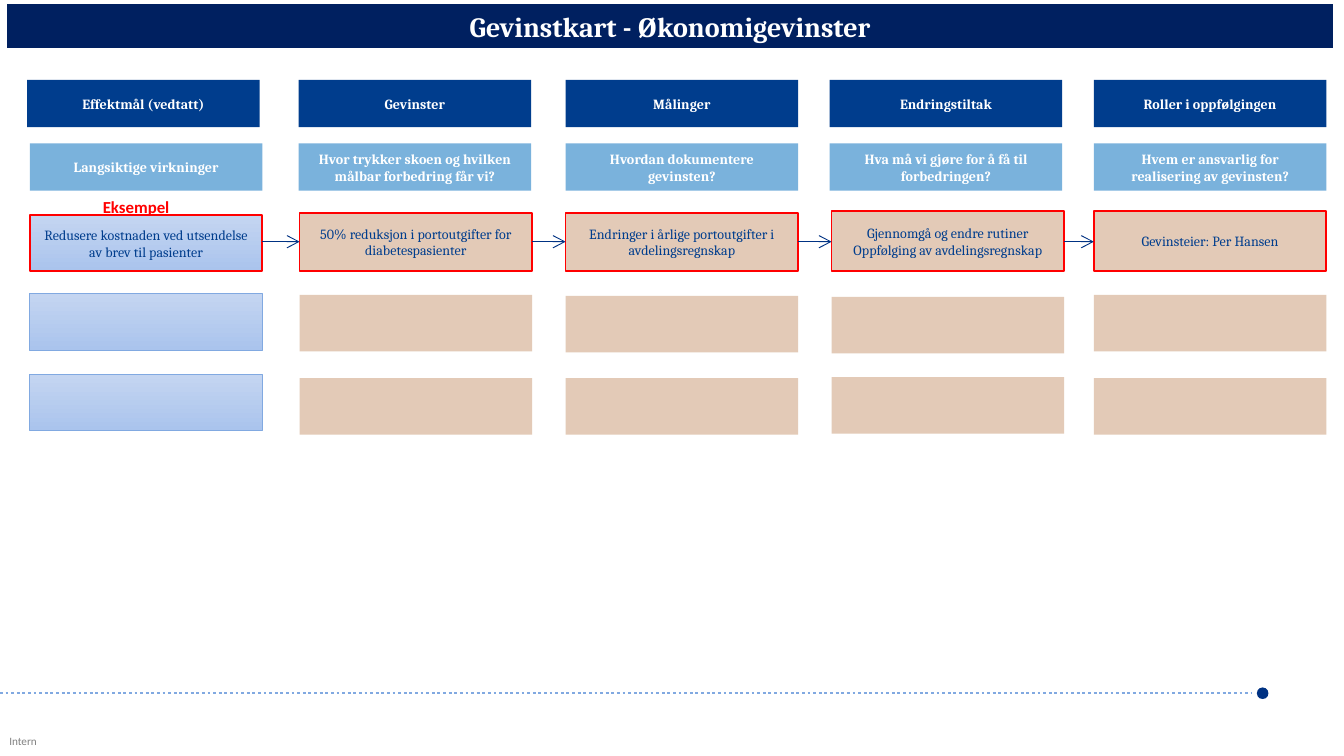
from lxml import etree
from pptx import Presentation
from pptx import util as u
from pptx.dml.color import RGBColor
from pptx.enum import dml, shapes, text
from pptx.oxml import ns

NAVY, BLUE, SKY, BEIGE = "002060", "003D8D", "7AB2DC", "D1A887"
RED, WHITE, PALE, ACCENT = "FF0000", "FFFFFF", "81A9E1", "003283"
HEADING_LEFTS = (14.5, 160, 303, 444.5, 586)
CARD_LEFTS = (16, 160.5, 303, 445.5, 586)
WIDTH = 124.6
HEADINGS = ("Effektmål (vedtatt)", "Gevinster", "Målinger", "Endringstiltak", "Roller i oppfølgingen")
QUESTIONS = (
    "Langsiktige virkninger",
    "Hvor trykker skoen og hvilken målbar forbedring får vi?",
    "Hvordan dokumentere gevinsten?",
    "Hva må vi gjøre for å få til forbedringen?",
    "Hvem er ansvarlig for realisering av gevinsten?",
)
EXAMPLES = (
    "Redusere kostnaden ved utsendelse av brev til pasienter",
    "50% reduksjon i portoutgifter for diabetespasienter",
    "Endringer i årlige portoutgifter i avdelingsregnskap",
    "Gjennomgå og endre rutiner\nOppfølging av avdelingsregnskap",
    "Gevinsteier: Per Hansen",
)
EXAMPLE_TOPS = (115.2, 114, 114, 113, 113)
EMPTY_ROWS = ((157.3, 158, 158.5, 159, 158), (200.5, 202.5, 202.5, 202, 202.5))


def rgb(value):
    """Turn a hex string into a colour."""
    return RGBColor.from_string(value)


def set_alpha(fill_owner, percent):
    """Make the colour inside a solid fill partly transparent."""
    color = next(fill_owner.iter(ns.qn("a:srgbClr")))
    etree.SubElement(color, ns.qn("a:alpha")).set("val", str(percent * 1000))


def write(box, wording, size, color, bold=False, font="Cambria", align=text.PP_ALIGN.CENTER):
    """Fill a shape with evenly formatted paragraphs."""
    frame = box.text_frame
    frame.text = wording
    frame.vertical_anchor = text.MSO_ANCHOR.MIDDLE
    for paragraph in frame.paragraphs:
        paragraph.alignment = align
        paragraph.font.name = font
        paragraph.font.size = u.Pt(size)
        paragraph.font.bold = bold
        paragraph.font.color.rgb = rgb(color)


def outline(box, color, width):
    """Draw the border of a shape."""
    box.line.color.rgb = rgb(color)
    box.line.width = u.Pt(width)


def add_block(slide, left, top, width, height, fill, kind=shapes.MSO_SHAPE.RECTANGLE):
    """Add a flat, borderless shape."""
    block = slide.shapes.add_shape(kind, u.Pt(left), u.Pt(top), u.Pt(width), u.Pt(height))
    block.shadow.inherit = False
    block.fill.solid()
    block.fill.fore_color.rgb = rgb(fill)
    block.line.fill.background()
    return block


def add_card(slide, column, top, height):
    """Add a goal card in the first column or a beige card in the others."""
    card = add_block(slide, CARD_LEFTS[column], top, WIDTH, height, BEIGE)
    if column:
        set_alpha(card.fill._xPr, 60)
        return card
    card.fill.gradient()
    card.fill.gradient_angle = 270
    for stop, color in zip(card.fill.gradient_stops, ("C4D5F1", "AAC4ED")):
        stop.color.rgb = rgb(color)
    outline(card, PALE, 0.5)
    return card


def add_line(slide, start, end, y, color, width):
    """Add a horizontal line without shadow."""
    line = slide.shapes.add_connector(
        shapes.MSO_CONNECTOR.STRAIGHT, u.Pt(start), u.Pt(y), u.Pt(end), u.Pt(y))
    outline(line, color, width)
    etree.SubElement(line._element.spPr, ns.qn("a:effectLst"))
    return line


def add_arrow(slide, start, end, y):
    """Add an arrow between two cards."""
    arrow = add_line(slide, start, end, y, ACCENT, 0.5)
    etree.SubElement(arrow.line._get_or_add_ln(), ns.qn("a:tailEnd")).set("type", "arrow")


def add_label(slide, left, top, width, height, wording, size, color, bold=False):
    """Add a small left-aligned label."""
    label = slide.shapes.add_textbox(u.Pt(left), u.Pt(top), u.Pt(width), u.Pt(height))
    label.text_frame.word_wrap = False
    write(label, wording, size, color, bold, "Calibri", text.PP_ALIGN.LEFT)
    return label


def add_title(slide, wording):
    """Turn the title placeholder into a banner."""
    title = slide.shapes.title
    title.left, title.top, title.width, title.height = map(u.Pt, (3, 1.5, 712, 25.2))
    title.fill.solid()
    title.fill.fore_color.rgb = rgb(NAVY)
    outline(title, WHITE, 1.5)
    title.text_frame.auto_size = text.MSO_AUTO_SIZE.NONE
    write(title, wording, 15, WHITE, True)


def add_footer(slide):
    """Add the dotted rule, its end point and the classification."""
    rule = add_line(slide, 0, 670.5, 371.3, PALE, 1.5)
    rule.line.dash_style = dml.MSO_LINE.ROUND_DOT
    add_block(slide, 673.3, 368.3, 6.2, 6.2, ACCENT, shapes.MSO_SHAPE.OVAL)
    label = add_label(slide, 5, 393.2, 16.5, 7.2, "Intern", 6, "000000")
    set_alpha(label._element, 50)
    frame = label.text_frame
    frame.margin_left = frame.margin_right = frame.margin_top = frame.margin_bottom = 0


def main():
    """Build the benefits map."""
    deck = Presentation()
    deck.slide_width, deck.slide_height = u.Pt(720), u.Pt(405)
    slide = deck.slides.add_slide(deck.slide_layouts[5])
    add_footer(slide)
    add_title(slide, "Gevinstkart - Økonomigevinster")
    for column, left in enumerate(HEADING_LEFTS):
        heading = add_block(slide, left, 42.8, WIDTH, 25.4, BLUE)
        write(heading, HEADINGS[column], 7.5, WHITE, True)
        question_left = left if column else CARD_LEFTS[0]
        question = add_block(slide, question_left, 76.8, WIDTH, 25.4, SKY)
        write(question, QUESTIONS[column], 7.5, WHITE, True)
        top = EXAMPLE_TOPS[column]
        example = add_card(slide, column, top, 145.3 - top)
        outline(example, RED, 1)
        write(example, EXAMPLES[column], 7.5, BLUE)
        for tops in EMPTY_ROWS:
            add_card(slide, column, tops[column], 30.3)
    for left, following in zip(CARD_LEFTS, CARD_LEFTS[1:]):
        add_arrow(slide, left + WIDTH, following, 129.5)
    add_label(slide, 48, 101.5, 51, 18, "Eksempel", 9, RED, True)
    deck.save("out.pptx")


if __name__ == "__main__":
    main()
